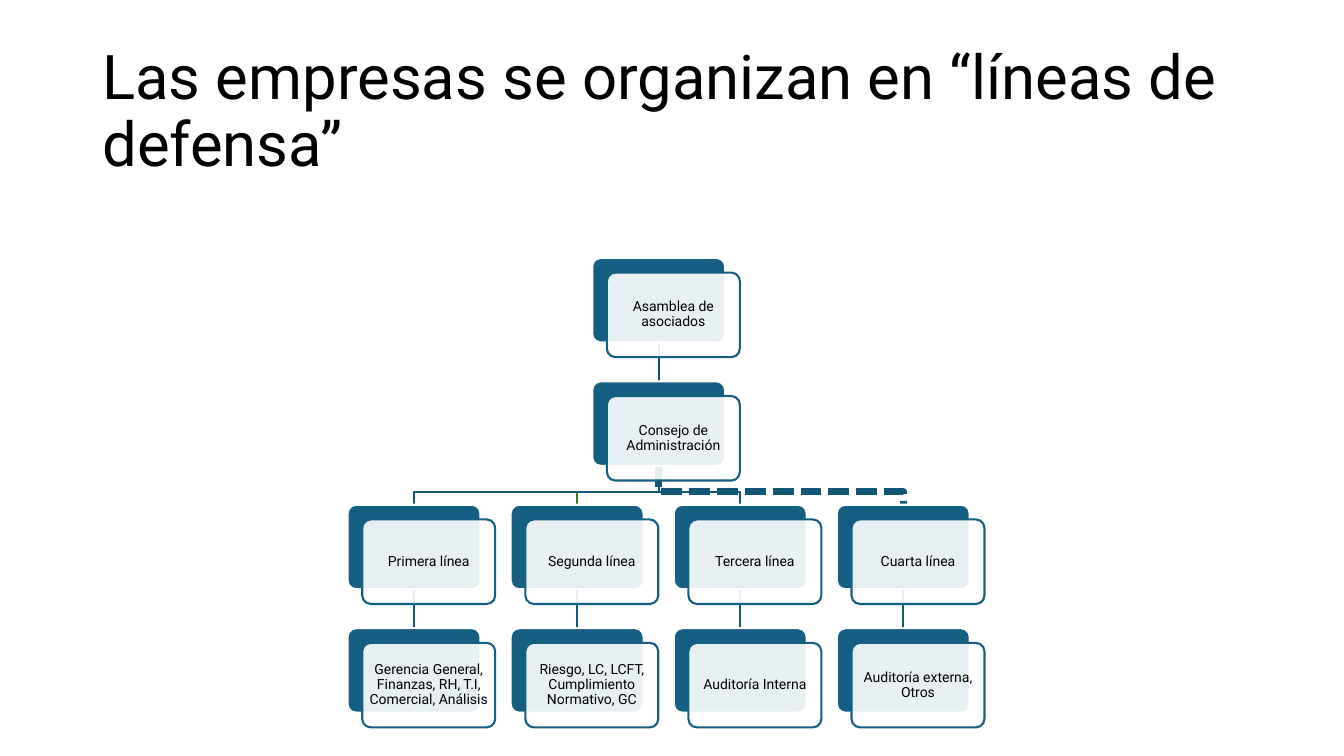
from lxml.etree import SubElement
from pptx import Presentation
from pptx.dml.color import RGBColor
from pptx.enum.dml import MSO_LINE_DASH_STYLE as Dash
from pptx.enum.shapes import MSO_CONNECTOR as Connector, MSO_SHAPE as Shape
from pptx.enum.text import MSO_ANCHOR as Anchor, PP_ALIGN as Align
from pptx.oxml.ns import qn
from pptx.util import Cm, Pt

TITLE = "Las empresas se organizan en “líneas de defensa”"
GOVERNANCE = ["Asamblea de asociados", "Consejo de Administración"]
DEFENSE_LINES = [
    ("Primera línea", "Gerencia General, Finanzas, RH, T.I, Comercial, Análisis", "135776", 1.5, None),
    ("Segunda línea", "Riesgo, LC, LCFT, Cumplimiento Normativo, GC", "3B7D23", 1.5, None),
    ("Tercera línea", "Auditoría Interna", "135776", 1.5, None),
    ("Cuarta línea", "Auditoría externa, Otros", "135776", 5, Dash.SQUARE_DOT),
]
FONT = "Roboto"
BLACK, WHITE, TEAL = "000000", "FFFFFF", "156082"
ROOT_LINK, LEAF_LINK = "114D68", "135776"

CHART_LEFT, CHART_TOP = 8.76, 6.5
COLUMN_STEP, ROW_STEP = 4.11, 3.11
BOX_WIDTH, BOX_HEIGHT = 3.35, 2.13
CARD_SHIFT = 0.37
BEND_RISE = 0.33
CENTER_COLUMN = (len(DEFENSE_LINES) - 1) / 2


def color(value):
    return RGBColor.from_string(value)


def box_left(column):
    return CHART_LEFT + column * COLUMN_STEP


def box_center(column):
    return box_left(column) + BOX_WIDTH / 2


def box_top(row):
    return CHART_TOP + row * ROW_STEP


def style_line(shape, line_color, width, dash=None):
    shape.line.color.rgb = color(line_color)
    shape.line.width = Pt(width)
    if dash:
        shape.line.dash_style = dash


def write(shape, text, size, align):
    frame = shape.text_frame
    frame.word_wrap = True
    frame.vertical_anchor = Anchor.MIDDLE
    paragraph = frame.paragraphs[0]
    paragraph.alignment = align
    paragraph.line_spacing = 0.9
    run = paragraph.add_run()
    run.text = text
    run.font.name = FONT
    run.font.size = Pt(size)
    run.font.color.rgb = color(BLACK)
    return frame


def add_panel(slide, left, top, fill_color, line_color):
    shape = slide.shapes.add_shape(
        Shape.ROUNDED_RECTANGLE, Cm(left), Cm(top), Cm(BOX_WIDTH), Cm(BOX_HEIGHT))
    shape.adjustments[0] = 0.1
    shape.shadow.inherit = False
    shape.fill.solid()
    shape.fill.fore_color.rgb = color(fill_color)
    style_line(shape, line_color, 1.5)
    return shape


def add_node(slide, column, row, text):
    left, top = box_left(column), box_top(row)
    add_panel(slide, left, top, TEAL, WHITE)
    card = add_panel(slide, left + CARD_SHIFT, top + CARD_SHIFT, WHITE, TEAL)
    fill = card.fill._xPr.find(qn("a:solidFill"))
    SubElement(fill[0], qn("a:alpha"), val="90000")
    frame = write(card, text, 10, Align.CENTER)
    frame.margin_left = frame.margin_right = Cm(0.1)
    frame.margin_top = frame.margin_bottom = Cm(0.1)


def add_straight_link(slide, column, row, line_color):
    x = Cm(box_center(column))
    link = slide.shapes.add_connector(
        Connector.STRAIGHT, x, Cm(box_top(row) + BOX_HEIGHT), x, Cm(box_top(row + 1)))
    style_line(link, line_color, 1.5)
    SubElement(link._element.spPr, qn("a:effectLst"))


def add_branch(slide, column, line_color, width, dash):
    start_x, end_x = Cm(box_center(CENTER_COLUMN)), Cm(box_center(column))
    start_y, end_y = Cm(box_top(1) + BOX_HEIGHT), Cm(box_top(2))
    bend_y = end_y - Cm(BEND_RISE)
    builder = slide.shapes.build_freeform(start_x, start_y)
    builder.add_line_segments(
        [(start_x, bend_y), (end_x, bend_y), (end_x, end_y)], close=False)
    branch = builder.convert_to_shape()
    branch.shadow.inherit = False
    branch.fill.background()
    style_line(branch, line_color, width, dash)


def main():
    presentation = Presentation()
    presentation.slide_width, presentation.slide_height = Cm(33.87), Cm(19.05)
    slide = presentation.slides.add_slide(presentation.slide_layouts[6])

    title = slide.shapes.add_textbox(Cm(2.33), Cm(1.01), Cm(29.21), Cm(3.68))
    write(title, TITLE, 44, Align.LEFT)

    for column, (_, _, line_color, width, dash) in reversed(list(enumerate(DEFENSE_LINES))):
        add_straight_link(slide, column, 2, LEAF_LINK)
        add_branch(slide, column, line_color, width, dash)
    add_straight_link(slide, CENTER_COLUMN, 0, ROOT_LINK)

    for row, body in enumerate(GOVERNANCE):
        add_node(slide, CENTER_COLUMN, row, body)
    for column, (name, areas, *_) in enumerate(DEFENSE_LINES):
        add_node(slide, column, 2, name)
        add_node(slide, column, 3, areas)

    presentation.save("out.pptx")


if __name__ == "__main__":
    main()
